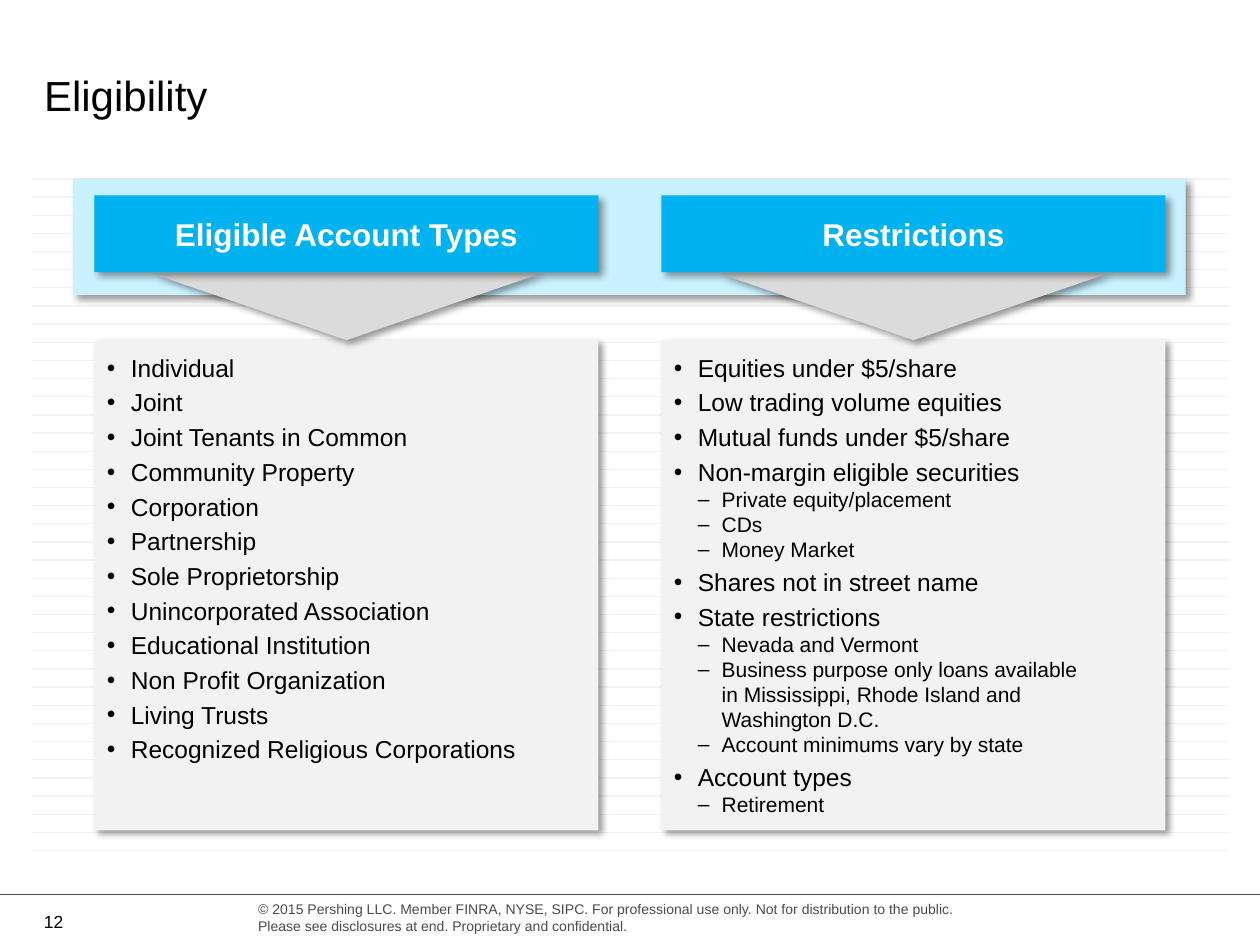
from copy import deepcopy
from lxml.etree import SubElement
from pptx import Presentation
from pptx.dml.color import RGBColor
from pptx.enum.shapes import MSO_CONNECTOR, MSO_SHAPE
from pptx.enum.text import MSO_ANCHOR, MSO_AUTO_SIZE, PP_ALIGN
from pptx.oxml.ns import qn
from pptx.util import Inches, Pt

TITLE = "Eligibility"
COLUMNS = [
    ("Eligible Account Types", [
        ("Individual", []),
        ("Joint", []),
        ("Joint Tenants in Common", []),
        ("Community Property", []),
        ("Corporation", []),
        ("Partnership", []),
        ("Sole Proprietorship", []),
        ("Unincorporated Association", []),
        ("Educational Institution", []),
        ("Non Profit Organization", []),
        ("Living Trusts", []),
        ("Recognized Religious Corporations", []),
    ]),
    ("Restrictions", [
        ("Equities under $5/share", []),
        ("Low trading volume equities", []),
        ("Mutual funds under $5/share", []),
        ("Non-margin eligible securities",
         ["Private equity/placement", "CDs", "Money Market"]),
        ("Shares not in street name", []),
        ("State restrictions", [
            "Nevada and Vermont",
            "Business purpose only loans available \nin Mississippi, Rhode Island and \nWashington D.C.",
            "Account minimums vary by state",
        ]),
        ("Account types", ["Retirement"]),
    ]),
]
PAGE_NUMBER = "12"
COPYRIGHT = (
    "© 2015 Pershing LLC. Member FINRA, NYSE, SIPC. For professional use only. "
    "Not for distribution to the public. \n"
    "Please see disclosures at end. Proprietary and confidential."
)

WIDTH, HEIGHT = 10, 7.5
MARGIN = 0.25
COLUMN_LEFT, COLUMN_WIDTH, COLUMN_STEP = 0.75, 4, 4.5
HEADER_TOP, HEADER_HEIGHT = 1.55, 0.61
PANEL_TOP, PANEL_HEIGHT = 2.7, 3.89
ARROW_SPAN, ARROW_DEPTH = 3.09, 0.53
RULE_TOP, RULE_BOTTOM, RULE_COUNT = 1.42, 6.75, 38
FOOTER_TOP = 7.1
INDENT = 0.19
BULLETS = [{"char": "•", "size": 14, "before": 3}, {"char": "–", "size": 12, "before": 0}]


def color(value):
    return RGBColor.from_string(value)


def set_values(target, values):
    for name, value in values.items():
        setattr(target, name, value)


def write(para, text, size, ink="000000", bold=False):
    para.text = text
    for span in para.runs:
        set_values(span.font, {"name": "Arial", "size": Pt(size), "bold": bold})
        span.font.color.rgb = color(ink)
    for line_break in para._p.findall(qn("a:br")):
        line_break.append(deepcopy(para.runs[0]._r.rPr))


def frame_values(box, inset_x=0.1, inset_y=0.05, anchor=MSO_ANCHOR.TOP, wrap=True):
    set_values(box.text_frame, {
        "margin_left": Inches(inset_x), "margin_right": Inches(inset_x),
        "margin_top": Inches(inset_y), "margin_bottom": Inches(inset_y),
        "vertical_anchor": anchor, "word_wrap": wrap,
        "auto_size": MSO_AUTO_SIZE.NONE,
    })
    return box.text_frame


def add_rule(shapes, left, right, y, ink, weight):
    rule = shapes.add_connector(
        MSO_CONNECTOR.STRAIGHT, Inches(left), Inches(y), Inches(right), Inches(y))
    rule.line.color.rgb = color(ink)
    rule.line.width = Pt(weight)
    SubElement(rule._element.spPr, qn("a:effectLst"))


def add_block(page, kind, area, fill):
    block = page.shapes.add_shape(kind, *map(Inches, area))
    block.fill.solid()
    block.fill.fore_color.rgb = color(fill)
    block.line.fill.background()
    block.shadow.inherit = False
    effects = block._element.spPr.find(qn("a:effectLst"))
    shadow = SubElement(effects, qn("a:outerShdw"), blurRad=str(Pt(4)), dist=str(Pt(3)),
                        dir="2700000", algn="tl", rotWithShape="0")
    ink = SubElement(shadow, qn("a:srgbClr"), val="000000")
    SubElement(ink, qn("a:alpha"), val="40000")
    return block


def add_bullet(para, level):
    properties = para._p.get_or_add_pPr()
    properties.set("marL", str(Inches(INDENT * (level + 1))))
    properties.set("indent", str(-Inches(INDENT)))
    ink = SubElement(properties, qn("a:buClr"))
    SubElement(ink, qn("a:srgbClr"), val="000000")
    SubElement(properties, qn("a:buFont"), typeface="Arial")
    SubElement(properties, qn("a:buChar"), char=BULLETS[level]["char"])


def add_panel(page, left, items):
    panel = add_block(page, MSO_SHAPE.RECTANGLE,
                      (left, PANEL_TOP, COLUMN_WIDTH, PANEL_HEIGHT), "F2F2F2")
    frame = frame_values(panel, 0.1, 0.1)
    lines = [line for item, details in items
             for line in [(item, 0)] + [(detail, 1) for detail in details]]
    for index, (text, level) in enumerate(lines):
        para = frame.add_paragraph() if index else frame.paragraphs[0]
        add_bullet(para, level)
        set_values(para, {"level": level, "alignment": PP_ALIGN.LEFT,
                          "space_before": Pt(BULLETS[level]["before"] if index else 0)})
        write(para, text, BULLETS[level]["size"])


def add_arrow(page, left):
    middle_x = left + COLUMN_WIDTH / 2
    middle_y = PANEL_TOP - ARROW_DEPTH / 2
    arrow = add_block(page, MSO_SHAPE.PENTAGON,
                      (middle_x - ARROW_DEPTH / 2, middle_y - ARROW_SPAN / 2,
                       ARROW_DEPTH, ARROW_SPAN), "DBDBDB")
    arrow.adjustments[0] = 1
    arrow.rotation = 90


def add_header(page, left, text):
    header = add_block(page, MSO_SHAPE.RECTANGLE,
                       (left, HEADER_TOP, COLUMN_WIDTH, HEADER_HEIGHT), "00B2EF")
    para = frame_values(header, 0.05, 0.15, MSO_ANCHOR.MIDDLE).paragraphs[0]
    para.alignment = PP_ALIGN.CENTER
    write(para, text, 18, "FFFFFF", True)


def add_footer(page):
    add_rule(page.shapes, 0, WIDTH, FOOTER_TOP, "4B4B4B", 1)
    number = page.shapes.add_textbox(*map(Inches, (MARGIN, 7.12, 0.45, 0.38)))
    frame = frame_values(number, anchor=MSO_ANCHOR.MIDDLE, wrap=False)
    write(frame.paragraphs[0], PAGE_NUMBER, 10)
    notice = page.shapes.add_textbox(*map(Inches, (1.95, FOOTER_TOP, 6.59, 0.37)))
    write(frame_values(notice).paragraphs[0], COPYRIGHT, 8, "4B4B4B")


def main():
    deck = Presentation()
    set_values(deck, {"slide_width": Inches(WIDTH), "slide_height": Inches(HEIGHT)})
    page = deck.slides.add_slide(deck.slide_layouts[5])

    title = page.shapes.title
    set_values(title, {"left": Inches(MARGIN), "top": Inches(0.5),
                       "width": Inches(WIDTH - 2 * MARGIN), "height": Inches(0.46)})
    para = frame_values(title).paragraphs[0]
    para.alignment = PP_ALIGN.LEFT
    write(para, TITLE, 24)

    add_footer(page)
    rules = page.shapes.add_group_shape()
    gap = (RULE_BOTTOM - RULE_TOP) / (RULE_COUNT - 1)
    for row in range(RULE_COUNT):
        add_rule(rules.shapes, MARGIN, WIDTH - MARGIN, RULE_TOP + row * gap, "F2F2F2", 0.75)

    columns = [(COLUMN_LEFT + index * COLUMN_STEP, heading, items)
               for index, (heading, items) in enumerate(COLUMNS)]
    for left, heading, items in columns:
        add_panel(page, left, items)
    add_block(page, MSO_SHAPE.RECTANGLE, (0.58, RULE_TOP, 8.83, 0.92), "C9F1FF")
    for left, heading, items in columns:
        add_arrow(page, left)
        add_header(page, left, heading)

    deck.save("out.pptx")


if __name__ == "__main__":
    main()
